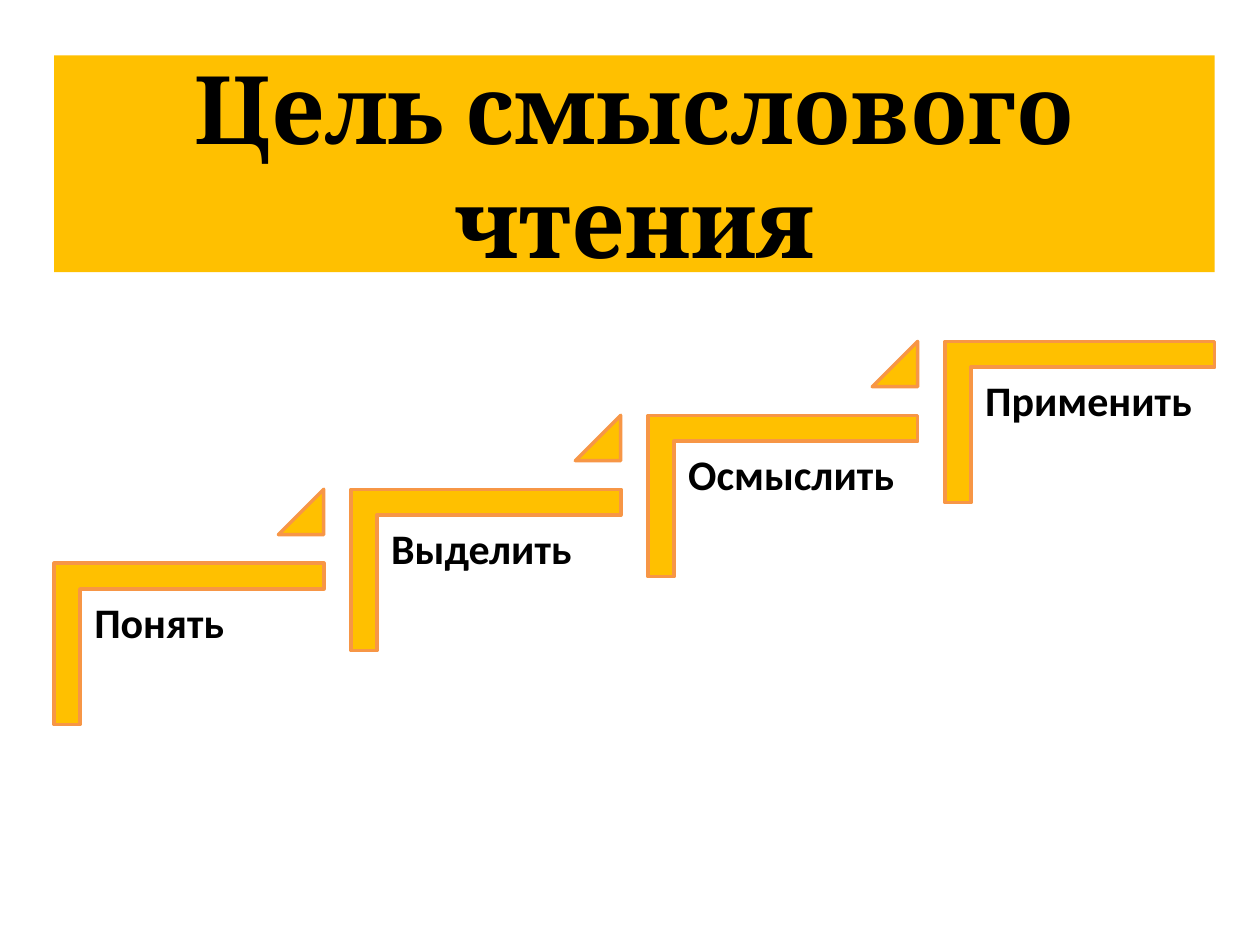
from pptx import Presentation
from pptx.dml.color import RGBColor
from pptx.enum.shapes import MSO_SHAPE
from pptx.enum.text import MSO_ANCHOR, MSO_AUTO_SIZE, PP_ALIGN
from pptx.util import Inches, Pt

CORNER, TRIANGLE = MSO_SHAPE.CORNER, MSO_SHAPE.ISOSCELES_TRIANGLE
MIDDLE, TOP = MSO_ANCHOR.MIDDLE, MSO_ANCHOR.TOP
CENTER, LEFT = PP_ALIGN.CENTER, PP_ALIGN.LEFT
NO_FIT = MSO_AUTO_SIZE.NONE
TITLE_ONLY = 5

COLORS = {"gold": "FFC000", "edge": "F79646", "text": "000000"}
STEPS = ["Понять", "Выделить", "Осмыслить", "Применить"]

SLIDE_W, SLIDE_H = 10, 7.5
MARGIN, CONTENT_W = 0.43, 9.21
TITLE_BOX = (MARGIN, 0.44, CONTENT_W, 1.72)
STAIRS_BOX = (MARGIN, 2.71, CONTENT_W, 3.04)
CORNER_W, CORNER_H = 2.14, 1.28
TRIANGLE_SIZE = 0.36


def color(name):
    return RGBColor.from_string(COLORS[name])


def write(shape, text, font, size, align, anchor):
    frame = shape.text_frame
    frame.word_wrap = True
    frame.auto_size = NO_FIT
    frame.vertical_anchor = anchor
    para = frame.paragraphs[0]
    para.alignment = align
    span = para.add_run()
    span.text = text
    span.font.name = font
    span.font.size = Pt(size)
    span.font.bold = True
    span.font.color.rgb = color("text")
    return para


def add_title(page, box, text):
    title = page.shapes.title
    title.left, title.top, title.width, title.height = map(Inches, box)
    title.fill.solid()
    title.fill.fore_color.rgb = color("gold")
    write(title, text, "Cambria", 54, CENTER, MIDDLE)


def add_gold_shape(group, kind, box, adjustments):
    shape = group.shapes.add_shape(kind, *map(Inches, box))
    for index, value in enumerate(adjustments):
        shape.adjustments[index] = value
    shape.shadow.inherit = False
    shape.fill.solid()
    shape.fill.fore_color.rgb = color("gold")
    shape.line.color.rgb = color("edge")
    shape.line.width = Pt(2)
    return shape


def add_corner(group, left, top):
    """Place an L-shape turned by 90° so that it fills the given stair."""
    shift = (CORNER_W - CORNER_H) / 2
    box = (left + shift, top - shift, CORNER_H, CORNER_W)
    add_gold_shape(group, CORNER, box, [0.16, 0.16]).rotation = 90


def add_label(group, box, text):
    label = group.shapes.add_textbox(*map(Inches, box))
    frame = label.text_frame
    frame.margin_left = frame.margin_right = Inches(0.1)
    frame.margin_top = frame.margin_bottom = Inches(0.1)
    write(label, text, "Calibri", 24, LEFT, TOP).line_spacing = 0.9


def add_stairs(page, box, steps):
    """Climb from the lower left to the upper right corner of the box."""
    left, top, width, height = box
    group = page.shapes.add_group_shape()
    last = len(steps) - 1
    run = (width - CORNER_W) / last
    rise = (height - CORNER_H) / last
    for index, text in enumerate(steps):
        x = left + index * run
        y = top + (last - index) * rise
        add_corner(group, x, y)
        add_label(group, (x + 0.22, y + 0.21, 1.93, 1.69), text)
        if index < last:
            triangle_box = (x + CORNER_W - TRIANGLE_SIZE, y - rise,
                            TRIANGLE_SIZE, TRIANGLE_SIZE)
            add_gold_shape(group, TRIANGLE, triangle_box, [1])


def main():
    deck = Presentation()
    deck.slide_width, deck.slide_height = Inches(SLIDE_W), Inches(SLIDE_H)
    page = deck.slides.add_slide(deck.slide_layouts[TITLE_ONLY])
    add_title(page, TITLE_BOX, "Цель смыслового чтения")
    add_stairs(page, STAIRS_BOX, STEPS)
    deck.save("out.pptx")


if __name__ == "__main__":
    main()
